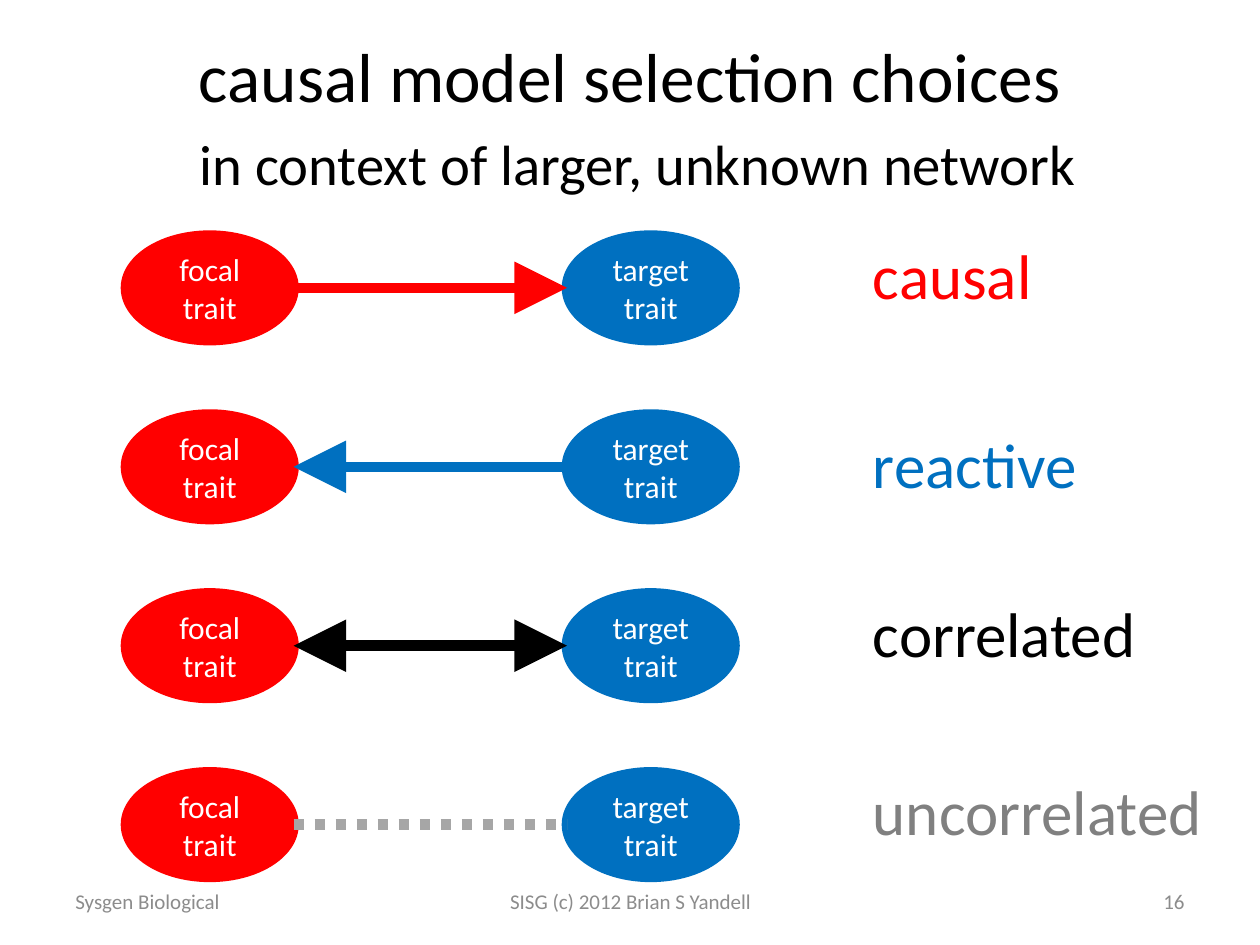
from dataclasses import dataclass
from typing import Optional

from lxml import etree
from pptx import Presentation
from pptx.dml.color import RGBColor
from pptx.enum.dml import MSO_LINE
from pptx.enum.shapes import MSO_CONNECTOR, MSO_SHAPE
from pptx.enum.text import MSO_ANCHOR, MSO_AUTO_SIZE, PP_ALIGN
from pptx.oxml.ns import qn
from pptx.util import Inches, Pt

ELLIPSE = MSO_SHAPE.OVAL
STRAIGHT = MSO_CONNECTOR.STRAIGHT
DOTTED = MSO_LINE.ROUND_DOT
TOP, MIDDLE = MSO_ANCHOR.TOP, MSO_ANCHOR.MIDDLE
LEFT, CENTER, RIGHT = PP_ALIGN.LEFT, PP_ALIGN.CENTER, PP_ALIGN.RIGHT

RED = RGBColor(0xFF, 0x00, 0x00)
BLUE = RGBColor(0x00, 0x70, 0xC0)
BLACK = RGBColor(0x00, 0x00, 0x00)
WHITE = RGBColor(0xFF, 0xFF, 0xFF)
GRAY = RGBColor(0x80, 0x80, 0x80)
LIGHT_GRAY = RGBColor(0xA6, 0xA6, 0xA6)
FOOTER_GRAY = RGBColor(0x8C, 0x8C, 0x8C)

FONT = "Calibri"
FOCAL_LEFT, TARGET_LEFT, LABEL_LEFT = 1.0, 4.5, 6.83
FIRST_ROW_TOP, ROW_PITCH = 1.87, 1.42
TRAIT_WIDTH, TRAIT_HEIGHT = 1.33, 0.83
LINE_WIDTH = Pt(6)


@dataclass(frozen=True)
class CausalModel:
    name: str
    label_top: float
    label_width: float
    label_color: RGBColor
    line_color: RGBColor
    arrow_ends: tuple[str, ...] = ()
    dash: Optional[MSO_LINE] = None


@dataclass(frozen=True)
class FooterItem:
    text: str
    left: float
    width: float
    alignment: PP_ALIGN


MODELS = [
    CausalModel("causal", 1.83, 1.47, RED, RED, ("a:tailEnd",)),
    CausalModel("reactive", 3.33, 1.84, BLUE, BLUE, ("a:headEnd",)),
    CausalModel("correlated", 4.67, 2.3, BLACK, BLACK, ("a:headEnd", "a:tailEnd")),
    CausalModel("uncorrelated", 6.08, 2.83, GRAY, LIGHT_GRAY, dash=DOTTED),
]

FOOTER_ITEMS = [
    FooterItem("16", 7.17, 2.33, RIGHT),
    FooterItem("Sysgen Biological", 0.5, 2.33, LEFT),
    FooterItem("SISG (c) 2012 Brian S Yandell", 3.42, 3.17, CENTER),
]


def add_run(paragraph, text: str, size: float, color: RGBColor) -> None:
    run = paragraph.add_run()
    run.text = text
    run.font.name = FONT
    run.font.size = Pt(size)
    run.font.color.rgb = color


def add_title(slide) -> None:
    title = slide.shapes.title
    title.left, title.top = Inches(0.5), Inches(0.3)
    title.width, title.height = Inches(9), Inches(1.25)
    frame = title.text_frame
    frame.auto_size = MSO_AUTO_SIZE.NONE
    frame.vertical_anchor = MIDDLE
    paragraph = frame.paragraphs[0]
    paragraph.alignment = CENTER
    add_run(paragraph, "causal model selection choices", 39.6, BLACK)
    paragraph.add_line_break()
    add_run(paragraph, " ", 39.6, BLACK)
    add_run(paragraph, "in context of larger, unknown network", 32.4, BLACK)


def add_trait(slide, text: str, left: float, top: float, color: RGBColor) -> None:
    shape = slide.shapes.add_shape(
        ELLIPSE, Inches(left), Inches(top), Inches(TRAIT_WIDTH), Inches(TRAIT_HEIGHT)
    )
    shape.shadow.inherit = False
    shape.fill.solid()
    shape.fill.fore_color.rgb = color
    shape.line.color.rgb = color
    shape.line.width = LINE_WIDTH
    shape.text_frame.word_wrap = True
    shape.text_frame.vertical_anchor = MIDDLE
    paragraph = shape.text_frame.paragraphs[0]
    paragraph.alignment = CENTER
    add_run(paragraph, text, 18, WHITE)


def add_relation(slide, model: CausalModel, middle: float) -> None:
    connector = slide.shapes.add_connector(
        STRAIGHT,
        Inches(FOCAL_LEFT + TRAIT_WIDTH),
        Inches(middle),
        Inches(TARGET_LEFT),
        Inches(middle),
    )
    connector.line.color.rgb = model.line_color
    connector.line.width = LINE_WIDTH
    if model.dash is not None:
        connector.line.dash_style = model.dash
    line = connector.line._get_or_add_ln()
    for end in model.arrow_ends:
        etree.SubElement(line, qn(end), type="triangle", w="lg", len="lg")
    etree.SubElement(connector._element.spPr, qn("a:effectLst"))


def add_text(
    slide, text: str, left: float, top: float, width: float, height: float,
    size: float, color: RGBColor, alignment: PP_ALIGN, anchor: MSO_ANCHOR, wrap: bool,
) -> None:
    box = slide.shapes.add_textbox(
        Inches(left), Inches(top), Inches(width), Inches(height)
    )
    box.text_frame.word_wrap = wrap
    box.text_frame.vertical_anchor = anchor
    if not wrap:
        box.text_frame.auto_size = MSO_AUTO_SIZE.SHAPE_TO_FIT_TEXT
    paragraph = box.text_frame.paragraphs[0]
    paragraph.alignment = alignment
    add_run(paragraph, text, size, color)


def main() -> None:
    presentation = Presentation()
    presentation.slide_width = Inches(10)
    presentation.slide_height = Inches(7.5)
    slide = presentation.slides.add_slide(presentation.slide_layouts[5])

    add_title(slide)
    for row, model in enumerate(MODELS):
        top = FIRST_ROW_TOP + row * ROW_PITCH
        add_trait(slide, "focal trait", FOCAL_LEFT, top, RED)
        add_trait(slide, "target trait", TARGET_LEFT, top, BLUE)
        add_relation(slide, model, top + TRAIT_HEIGHT / 2)
    for model in MODELS:
        add_text(slide, model.name, LABEL_LEFT, model.label_top, model.label_width,
                 0.71, 36, model.label_color, LEFT, TOP, False)
    for item in FOOTER_ITEMS:
        add_text(slide, item.text, item.left, 6.95, item.width, 0.4,
                 12, FOOTER_GRAY, item.alignment, MIDDLE, True)

    presentation.save("out.pptx")


if __name__ == "__main__":
    main()
